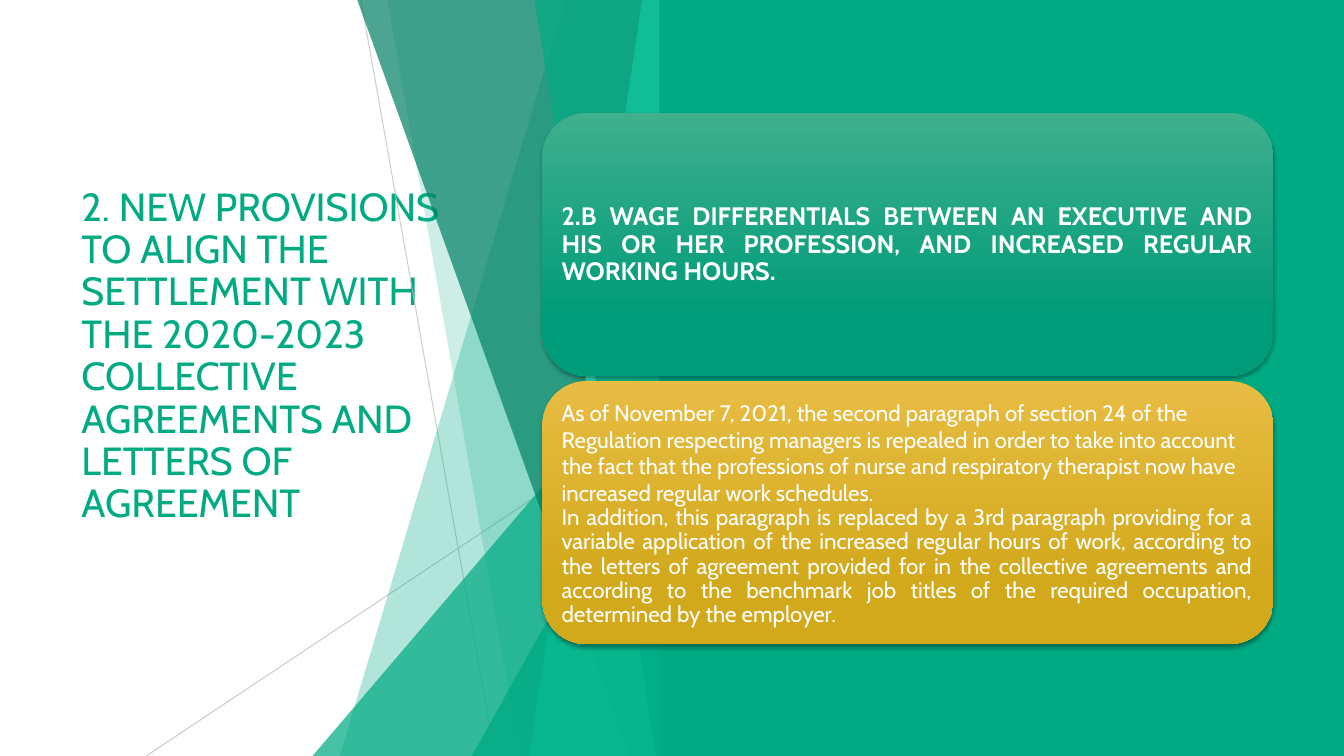
from lxml.etree import SubElement
from pptx import Presentation
from pptx.dml.color import RGBColor
from pptx.enum.shapes import MSO_CONNECTOR, MSO_SHAPE
from pptx.enum.text import MSO_ANCHOR, PP_ALIGN
from pptx.oxml.ns import qn
from pptx.util import Inches, Pt

HUES = {
    "green": "00AB84", "dark": "008063", "mint": "34FFD1",
    "grey": "BFBFBF", "white": "FFFFFF", "black": "000000",
    "leaf": "3FAF8C", "pine": "009C79",
    "gold": "E7BC43", "ochre": "D2A91B",
}


class Deck:
    font = "Cabin"

    def __init__(self, slide):
        self.shapes = slide.shapes

    def hue(self, name):
        return RGBColor.from_string(HUES[name])

    def fade(self, node, alpha):
        color = next(node.iter(qn("a:srgbClr")))
        SubElement(color, qn("a:alpha")).set("val", str(alpha * 1000))

    def paint(self, shape, hue, alpha=100):
        shape.shadow.inherit = False
        shape.line.fill.background()
        shape.fill.solid()
        shape.fill.fore_color.rgb = self.hue(hue)
        if alpha < 100:
            self.fade(shape.element.spPr, alpha)

    def line(self, x1, y1, x2, y2, alpha):
        ends = [Inches(v) for v in (x1, y1, x2, y2)]
        line = self.shapes.add_connector(MSO_CONNECTOR.STRAIGHT, *ends)
        line.line.color.rgb = self.hue("grey")
        line.line.width = Pt(0.75)
        props = line.element.spPr
        self.fade(props, alpha)
        SubElement(props, qn("a:effectLst"))

    def shape(self, kind, x, y, w, h):
        return self.shapes.add_shape(kind, *[Inches(v) for v in (x, y, w, h)])

    def block(self, x, y, w, h, hue):
        self.paint(self.shape(MSO_SHAPE.RECTANGLE, x, y, w, h), hue)

    def wedge(self, x, y, w, h, alpha):
        wedge = self.shape(MSO_SHAPE.ISOSCELES_TRIANGLE, x, y, w, h)
        wedge.adjustments[0] = 1
        self.paint(wedge, "green", alpha)

    def facet(self, top, base, hue, alpha):
        edge, high, low = 6.66, -0.01, 7.5
        spots = [(edge, high), (edge, low), (base, low)]
        pen = self.shapes.build_freeform(Inches(top), Inches(high))
        pen.add_line_segments([(Inches(x), Inches(y)) for x, y in spots])
        self.paint(pen.convert_to_shape(), hue, alpha)

    def card(self, x, y, w, h, first, last):
        card = self.shape(MSO_SHAPE.ROUNDED_RECTANGLE, x, y, w, h)
        card.shadow.inherit = False
        card.line.fill.background()
        card.fill.gradient()
        card.fill.gradient_angle = 270
        for stop, hue, spot in zip(card.fill.gradient_stops, (first, last), (0, 0.78)):
            stop.color.rgb = self.hue(hue)
            stop.position = spot
        glow = SubElement(card.element.spPr.find(qn("a:effectLst")), qn("a:outerShdw"))
        for key, val in (("blurRad", Pt(3)), ("dist", Pt(2)), ("dir", 90 * 60000)):
            glow.set(key, str(int(val)))
        glow.set("rotWithShape", "0")
        SubElement(glow, qn("a:srgbClr")).set("val", HUES["black"])
        self.fade(glow, 35)

    def text(self, x, y, w, h, paras, size, hue, pads, bold=False):
        box = self.shapes.add_textbox(*[Inches(v) for v in (x, y, w, h)])
        frame = box.text_frame
        frame.word_wrap = True
        frame.vertical_anchor = MSO_ANCHOR.MIDDLE
        (frame.margin_left, frame.margin_top,
         frame.margin_right, frame.margin_bottom) = [Inches(v) for v in pads]
        for i, (words, align, gap) in enumerate(paras):
            para = frame.add_paragraph() if i else frame.paragraphs[0]
            para.alignment = align
            para.line_spacing = gap
            run = para.add_run()
            run.text = words
            run.font.name = self.font
            run.font.size = Pt(size)
            run.font.bold = bold
            run.font.color.rgb = self.hue(hue)


def main():
    show = Presentation()
    show.slide_width, show.slide_height = Inches(13.33), Inches(7.5)
    deck = Deck(show.slides.add_slide(show.slide_layouts[6]))

    # Title
    title = ("2. NEW PROVISIONS TO ALIGN THE SETTLEMENT WITH THE 2020-2023 "
             "COLLECTIVE AGREEMENTS AND LETTERS OF AGREEMENT")
    deck.text(0.71, 1.51, 3.88, 4.48, [(title, PP_ALIGN.LEFT, 0.9)],
              28, "green", (0.1, 0.05, 0.1, 0.47))

    # Facets
    deck.line(3.58, 0, 4.91, 7.5, 75)
    deck.line(6.66, 4.03, 1.45, 7.5, 80)
    deck.facet(5.61, 3.37, "green", 30)
    deck.facet(3.84, 5.16, "green", 20)
    deck.wedge(3.1, 3.33, 3.56, 4.17, 72)
    deck.facet(3.54, 6.24, "dark", 70)
    deck.facet(6.37, 5.25, "mint", 70)
    deck.facet(5.3, 6.51, "green", 65)
    deck.wedge(4.68, 3.93, 1.99, 3.57, 80)

    # Right panel
    deck.block(6.54, 0, 6.8, 7.5, "green")

    # Cards
    head = ("2.B WAGE DIFFERENTIALS BETWEEN AN EXECUTIVE AND HIS OR HER "
            "PROFESSION, AND INCREASED REGULAR WORKING HOURS.")
    rule = ("As of November 7, 2021, the second paragraph of section 24 of the "
            "Regulation respecting managers is repealed in order to take into "
            "account the fact that the professions of nurse and respiratory "
            "therapist now have increased regular work schedules.")
    more = ("In addition, this paragraph is replaced by a 3rd paragraph providing "
            "for a variable application of the increased regular hours of work, "
            "according to the letters of agreement provided for in the collective "
            "agreements and according to the benchmark job titles of the required "
            "occupation, determined by the employer.")
    cards = [
        ("leaf", "pine", [(head, PP_ALIGN.JUSTIFY, 0.9)], 18, True),
        ("gold", "ochre", [(rule, PP_ALIGN.LEFT, 1.0),
                           (more, PP_ALIGN.JUSTIFY, 0.9)], 16, False),
    ]
    for i, (first, last, paras, size, bold) in enumerate(cards):
        top = 1.12 + i * 2.66
        deck.card(5.38, top, 7.25, 2.61, first, last)
        deck.text(5.5, top + 0.13, 6.99, 2.36, paras, size, "white",
                  (0.07,) * 4, bold)

    show.save("out.pptx")


if __name__ == "__main__":
    main()
